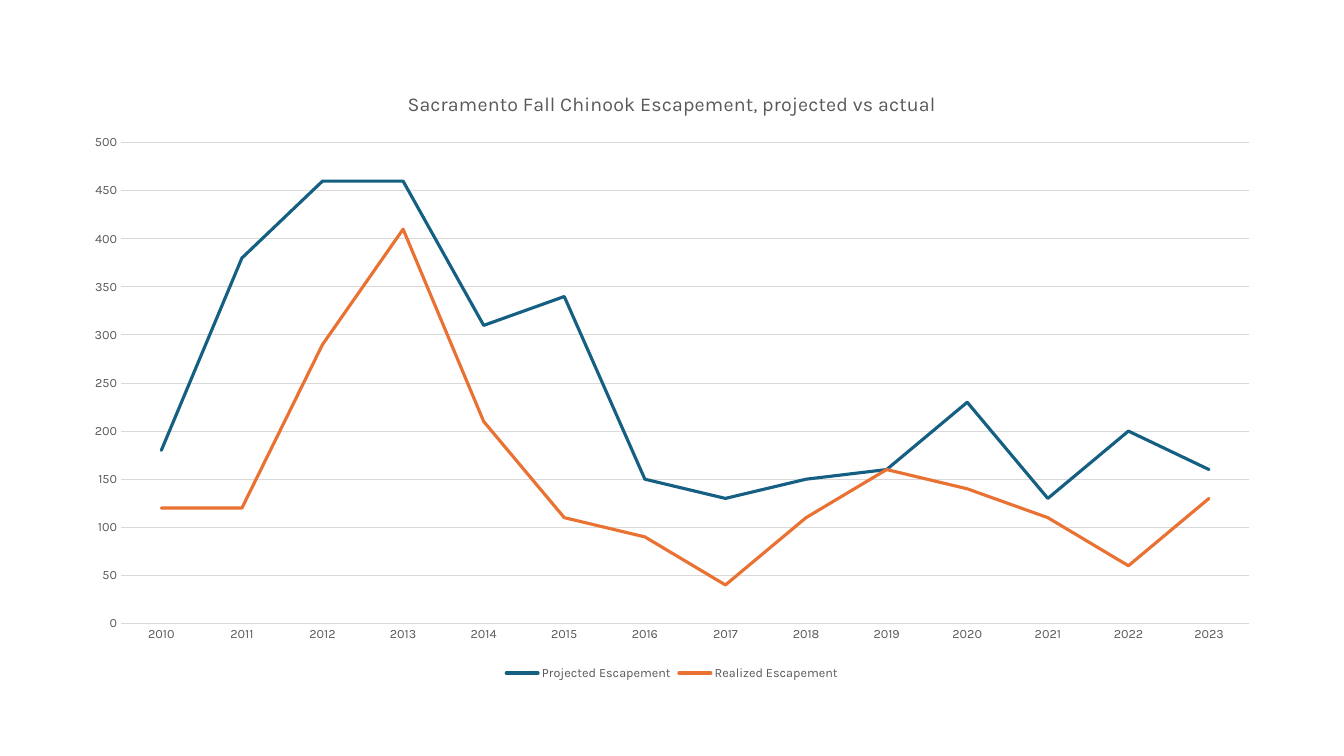
from dataclasses import dataclass

from pptx import Presentation
from pptx.chart.data import CategoryChartData
from pptx.dml.color import RGBColor
from pptx.enum.chart import XL_CHART_TYPE as ChartType
from pptx.enum.chart import XL_LEGEND_POSITION as LegendPosition
from pptx.enum.chart import XL_MARKER_STYLE as MarkerStyle
from pptx.enum.chart import XL_TICK_MARK as TickMark
from pptx.oxml.ns import qn
from pptx.util import Inches, Pt


@dataclass(frozen=True)
class Theme:
    font: str = "Karla"
    text: str = "595959"
    grid: str = "D9D9D9"
    projected: str = "156082"
    realized: str = "E97132"
    title_size: float = 14
    base_size: float = 10
    label_size: float = 9
    grid_width: float = 0.75
    series_width: float = 2.25


THEME = Theme()
TITLE = "Sacramento Fall Chinook Escapement, projected vs actual"
YEARS = [str(year) for year in range(2010, 2024)]
ESCAPEMENT = [
    ("Projected Escapement", THEME.projected,
     [180, 380, 460, 460, 310, 340, 150, 130, 150, 160, 230, 130, 200, 160]),
    ("Realized Escapement", THEME.realized,
     [120, 120, 290, 410, 210, 110, 90, 40, 110, 160, 140, 110, 60, 130]),
]


def style_font(font, size, color=THEME.text):
    font.name = THEME.font
    font.size = Pt(size)
    font.bold = False
    font.color.rgb = RGBColor.from_string(color)


def style_line(line, color, width):
    line.color.rgb = RGBColor.from_string(color)
    line.width = Pt(width)


def style_axis(axis):
    axis.major_tick_mark = TickMark.NONE
    axis.minor_tick_mark = TickMark.NONE
    style_font(axis.tick_labels.font, THEME.label_size)


def style_series(series, color):
    series.smooth = False
    series.marker.style = MarkerStyle.NONE
    style_line(series.format.line, color, THEME.series_width)
    outline = series._element.find(f"{qn('c:spPr')}/{qn('a:ln')}")
    outline.set("cap", "rnd")


def add_line_chart(slide, left, top, width, height):
    data = CategoryChartData()
    data.categories = YEARS
    for name, color, values in ESCAPEMENT:
        data.add_series(name, values)
    chart = slide.shapes.add_chart(
        ChartType.LINE, left, top, width, height, data).chart
    style_font(chart.font, THEME.base_size, "000000")
    for series, (name, color, values) in zip(chart.plots[0].series, ESCAPEMENT):
        style_series(series, color)
    return chart


def format_title(chart):
    chart.has_title = True
    text_frame = chart.chart_title.text_frame
    text_frame.text = TITLE
    style_font(text_frame.paragraphs[0].runs[0].font, THEME.title_size)
    chart.chart_title.include_in_layout = False


def format_axes(chart):
    years, counts = chart.category_axis, chart.value_axis
    style_axis(years)
    style_axis(counts)
    style_line(years.format.line, THEME.grid, THEME.grid_width)
    counts.format.line.fill.background()
    counts.minimum_scale = 0
    counts.maximum_scale = 500
    counts.major_unit = 50
    counts.has_major_gridlines = True
    style_line(counts.major_gridlines.format.line, THEME.grid, THEME.grid_width)


def format_legend(chart):
    chart.has_legend = True
    chart.legend.position = LegendPosition.BOTTOM
    chart.legend.include_in_layout = False
    style_font(chart.legend.font, THEME.label_size)


def main():
    presentation = Presentation()
    presentation.slide_width = Inches(13.33)
    presentation.slide_height = Inches(7.5)
    slide = presentation.slides.add_slide(presentation.slide_layouts[6])
    margin = Inches(0.7)
    chart = add_line_chart(
        slide, margin, margin,
        presentation.slide_width - 2 * margin,
        presentation.slide_height - 2 * margin - Inches(0.01))
    format_title(chart)
    format_axes(chart)
    format_legend(chart)
    presentation.save("out.pptx")


if __name__ == "__main__":
    main()
